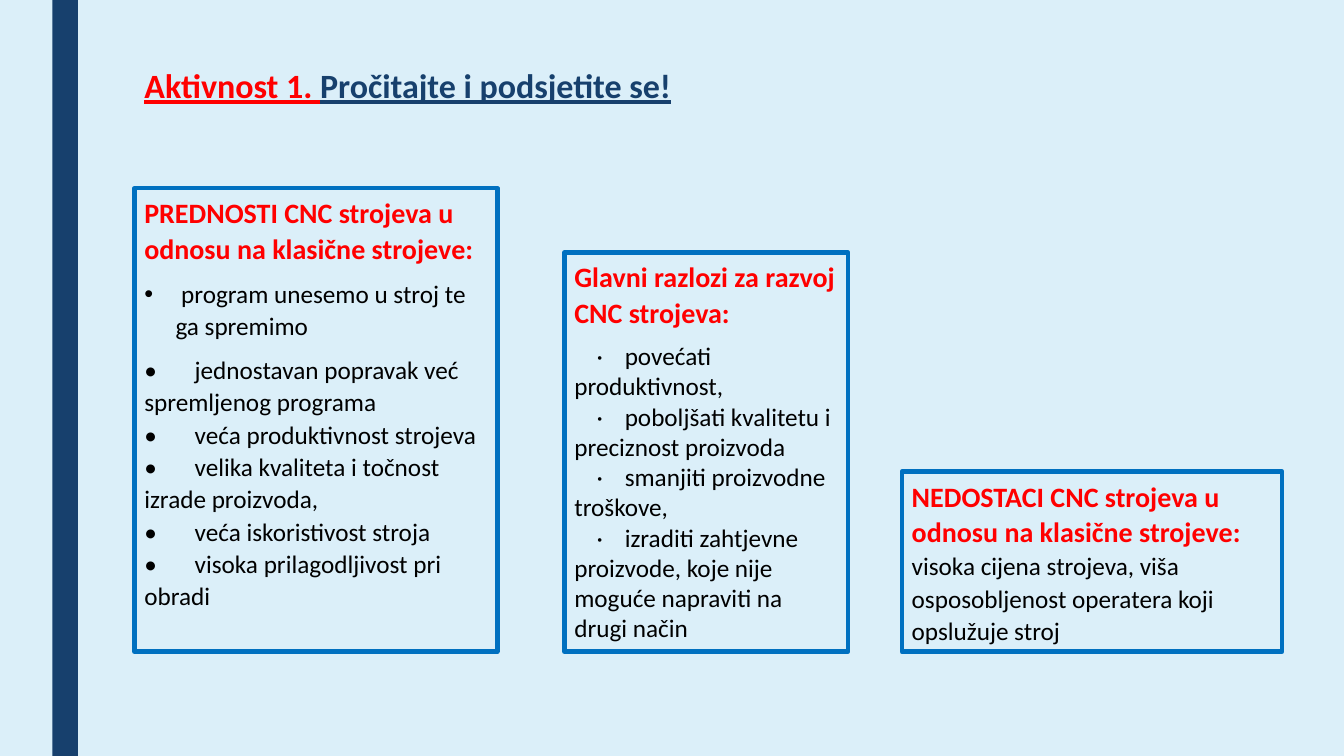
"""Build the slide on advantages and drawbacks of CNC machines."""
from lxml import etree
from pptx import Presentation
from pptx import util as u
from pptx.dml.color import RGBColor
from pptx.enum import shapes, text
from pptx.oxml.ns import qn

WIDTH, HEIGHT = u.Inches(13.33), u.Inches(7.5)
COLUMN, ROW = WIDTH / 100, HEIGHT / 100
CARD_BOTTOM = 86.2

PALE = RGBColor(0xDB, 0xEF, 0xF9)
NAVY = RGBColor(0x17, 0x40, 0x6D)
BLUE = RGBColor(0x00, 0x70, 0xC0)
RED = RGBColor(0xFF, 0x00, 0x00)
BLACK = RGBColor(0x00, 0x00, 0x00)

TITLE = {"name": "Calibri", "size": u.Pt(24.3), "bold": True, "underline": True}
HEADING = {"name": "Calibri", "size": u.Pt(20), "bold": True}
BODY = {"name": "Calibri", "size": u.Pt(18), "bold": False}
SPACED = {"line_spacing": 1.07, "space_after": u.Pt(8)}
TIGHT = {"line_spacing": 1.07, "space_after": u.Pt(0)}
SINGLE = {"line_spacing": 1.0, "space_after": u.Pt(0)}

ADVANTAGES = [
    "jednostavan popravak već spremljenog programa",
    "veća produktivnost strojeva",
    "velika kvaliteta i točnost izrade proizvoda,",
    "veća iskoristivost stroja",
    "visoka prilagodljivost pri obradi",
]
REASONS = [
    "povećati produktivnost,",
    "poboljšati kvalitetu i preciznost proizvoda",
    "smanjiti proizvodne troškove,",
    "izraditi zahtjevne proizvode, koje nije moguće napraviti na drugi način",
]


def apply(target, values):
    """Set every attribute named in a dict."""
    for name, value in values.items():
        setattr(target, name, value)


def place(columns, rows, wide, high):
    """Turn grid columns and rows into left, top, width and height."""
    return [u.Emu(round(n)) for n in
            (columns * COLUMN, rows * ROW, wide * COLUMN, high * ROW)]


def add_span(para, words, style, colour):
    """Add a formatted run to a paragraph."""
    span = para.add_run()
    span.text = words
    apply(span.font, style)
    span.font.color.rgb = colour


def add_para(box, words, style, colour, spacing):
    """Add a paragraph, using the empty first one when it is free."""
    frame = box.text_frame
    first = frame.paragraphs[0]
    para = frame.add_paragraph() if first.runs else first
    para.alignment = text.PP_ALIGN.LEFT
    apply(para, spacing)
    add_span(para, words, style, colour)
    return para


def set_bullet(para, mark, hanging):
    """Give a paragraph a hanging bullet."""
    props = para._p.get_or_add_pPr()
    props.set("marL", str(hanging))
    props.set("indent", str(-hanging))
    etree.SubElement(props, qn("a:buFont"), typeface="Arial")
    etree.SubElement(props, qn("a:buChar"), char=mark)


def add_marked(box, mark, items, spacing, indent, stop):
    """Add items whose mark and words are parted by a tab stop."""
    for item in items:
        para = add_para(box, f"{mark}\t{item}", BODY, BLACK, spacing)
        props = para._p.get_or_add_pPr()
        props.set("marL", "0")
        props.set("indent", str(indent))
        stops = etree.SubElement(props, qn("a:tabLst"))
        etree.SubElement(stops, qn("a:tab"), pos=str(stop), algn="l")


def add_rectangle(slide, area):
    """Add a plain rectangle without shadow."""
    box = slide.shapes.add_shape(shapes.MSO_SHAPE.RECTANGLE, *area)
    box.shadow.inherit = False
    return box


def add_bar(slide):
    """Add the dark vertical bar."""
    bar = add_rectangle(slide, place(3.9, 0, 1.9, 100))
    bar.fill.solid()
    bar.fill.fore_color.rgb = NAVY
    bar.line.fill.background()


def add_title(slide):
    """Place and format the title."""
    title = slide.shapes.title
    apply(title, dict(zip(("left", "top", "width", "height"),
                          place(10, 8.5, 78.8, 10.3))))
    apply(title.text_frame, {"vertical_anchor": text.MSO_ANCHOR.TOP,
                             "auto_size": text.MSO_AUTO_SIZE.NONE,
                             "word_wrap": True})
    para = add_para(title, "Aktivnost 1. ", TITLE, RED, {"line_spacing": 0.89})
    add_span(para, "Pročitajte i podsjetite se!", TITLE, NAVY)


def add_card(slide, column, wide, high, heading):
    """Add an outlined card with a heading, standing on the common base."""
    card = add_rectangle(slide, place(column, CARD_BOTTOM - high, wide, high))
    card.fill.background()
    card.line.color.rgb = BLUE
    card.line.width = u.Pt(3.25)
    apply(card.text_frame, {"vertical_anchor": text.MSO_ANCHOR.TOP,
                            "word_wrap": True})
    add_para(card, heading, HEADING, RED, SPACED)
    return card


def main():
    """Build and save the deck."""
    deck = Presentation()
    apply(deck, {"slide_width": WIDTH, "slide_height": HEIGHT})
    slide = deck.slides.add_slide(deck.slide_layouts[5])
    slide.background.fill.solid()
    slide.background.fill.fore_color.rgb = PALE
    add_bar(slide)
    add_title(slide)

    card = add_card(slide, 10, 27, 61.3,
                    "PREDNOSTI CNC strojeva u odnosu na klasične strojeve:")
    para = add_para(card, " program unesemo u stroj te ga spremimo",
                    BODY, BLACK, SPACED)
    set_bullet(para, "•", u.Inches(0.31))
    add_marked(card, "•", ADVANTAGES, TIGHT, 0, u.Inches(0.41))

    card = add_card(slide, 42, 21.1, 52.8,
                    "Glavni razlozi za razvoj CNC strojeva:")
    add_marked(card, "·", REASONS, SINGLE, u.Inches(0.22), u.Inches(0.57))

    card = add_card(slide, 67.1, 28.3, 23.8,
                    "NEDOSTACI CNC strojeva u odnosu na klasične strojeve: ")
    add_span(card.text_frame.paragraphs[0],
             "visoka cijena strojeva, viša osposobljenost operatera "
             "koji opslužuje stroj", BODY, BLACK)
    deck.save("out.pptx")


if __name__ == "__main__":
    main()
